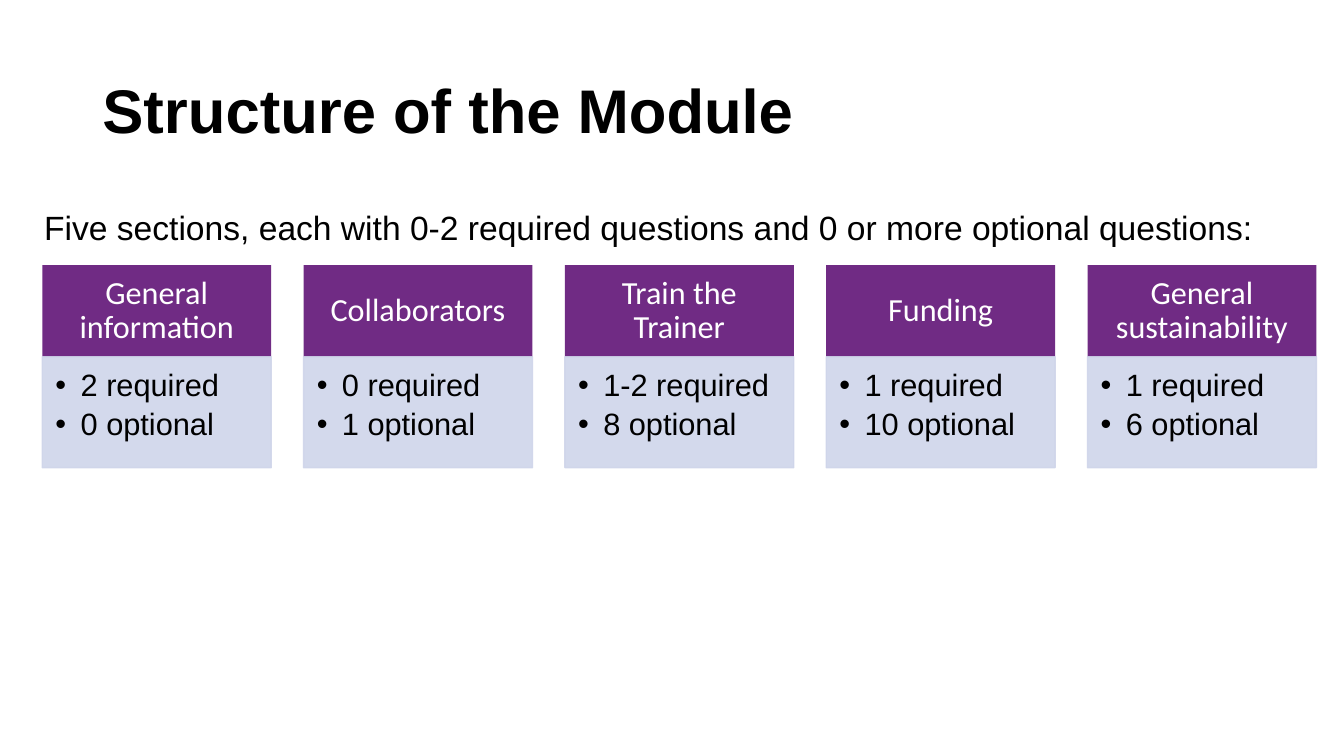
from dataclasses import dataclass

from lxml.etree import SubElement
from pptx import Presentation
from pptx.dml.color import RGBColor as RGB
from pptx.enum.shapes import MSO_SHAPE as Shape
from pptx.enum.text import MSO_ANCHOR as Anchor, PP_ALIGN as Align
from pptx.oxml.ns import qn
from pptx.util import Pt


@dataclass(frozen=True)
class Theme:
    black: RGB = RGB(0x00, 0x00, 0x00)
    white: RGB = RGB(0xFF, 0xFF, 0xFF)
    purple: RGB = RGB(0x70, 0x2B, 0x84)
    pale: RGB = RGB(0xCF, 0xD5, 0xEA)
    sans: str = "Arial"
    label: str = "Calibri"
    title: int = 44
    intro: int = 24
    head: int = 23
    item: int = 22


THEME = Theme()

SECTIONS = [
    ("General information", "2 required", "0 optional"),
    ("Collaborators", "0 required", "1 optional"),
    ("Train the Trainer", "1-2 required", "8 optional"),
    ("Funding", "1 required", "10 optional"),
    ("General sustainability", "1 required", "6 optional"),
]

LEFT, STEP, WIDTH = 30.24, 186.65, 163.5
HEAD_TOP, HEAD_HIGH = 189.4, 65.5
BODY_HIGH = 79.2


def place(shape, left, top, width, height):
    shape.left, shape.top = Pt(left), Pt(top)
    shape.width, shape.height = Pt(width), Pt(height)


def add_run(para, text, size, color, font=THEME.sans, bold=False):
    run = para.add_run()
    run.text = text
    run.font.name = font
    run.font.size = Pt(size)
    run.font.bold = bold
    run.font.color.rgb = color


def set_alpha(fill, percent):
    """Make a solid fill partly transparent."""
    for color in fill.iter(qn("a:srgbClr")):
        SubElement(color, qn("a:alpha"), val=str(percent * 1000))


def add_bullet(para, indent):
    props = para._p.get_or_add_pPr()
    props.set("marL", str(Pt(indent)))
    props.set("indent", str(-Pt(indent)))
    SubElement(props, qn("a:buFont"), typeface=THEME.sans)
    SubElement(props, qn("a:buChar"), char="•")


def add_box(slide, left, top, high, color, insets, anchor):
    box = slide.shapes.add_shape(
        Shape.RECTANGLE, Pt(left), Pt(top), Pt(WIDTH), Pt(high))
    box.shadow.inherit = False
    box.fill.solid()
    box.fill.fore_color.rgb = color
    frame = box.text_frame
    frame.word_wrap = True
    frame.vertical_anchor = anchor
    (frame.margin_left, frame.margin_top,
     frame.margin_right, frame.margin_bottom) = map(Pt, insets)
    return box


def add_head(slide, left, text):
    box = add_box(slide, left, HEAD_TOP, HEAD_HIGH, THEME.purple,
                  (13, 7.2, 13, 7.2), Anchor.MIDDLE)
    box.line.fill.background()
    para = box.text_frame.paragraphs[0]
    para.alignment = Align.CENTER
    para.line_spacing = 0.9
    add_run(para, text, THEME.head, THEME.white, THEME.label)


def add_list(slide, left, items):
    box = add_box(slide, left, HEAD_TOP + HEAD_HIGH, BODY_HIGH, THEME.pale,
                  (9.4, 9.4, 12.2, 13.7), Anchor.TOP)
    box.line.color.rgb = THEME.pale
    box.line.width = Pt(1)
    set_alpha(box._element.spPr, 90)
    frame = box.text_frame
    for index, item in enumerate(items):
        para = frame.add_paragraph() if index else frame.paragraphs[0]
        para.alignment = Align.LEFT
        para.line_spacing = 0.9
        para.space_after = Pt(4)
        add_bullet(para, 18)
        add_run(para, item, THEME.item, THEME.black)


def add_title(slide, text):
    title = slide.shapes.title
    place(title, 66, 28.8, 894, 104.4)
    title.text_frame.vertical_anchor = Anchor.MIDDLE
    para = title.text_frame.paragraphs[0]
    para.alignment = Align.LEFT
    para.line_spacing = 0.9
    add_run(para, text, THEME.title, THEME.black, bold=True)


def add_intro(slide, text):
    box = slide.shapes.add_textbox(Pt(24.5), Pt(144), Pt(911), Pt(36))
    box.text_frame.word_wrap = True
    add_run(box.text_frame.paragraphs[0], text, THEME.intro, THEME.black)


def main():
    deck = Presentation()
    deck.slide_width, deck.slide_height = Pt(960), Pt(540)
    slide = deck.slides.add_slide(deck.slide_layouts.get_by_name("Title Only"))
    add_title(slide, "Structure of the Module")
    for index, (head, *items) in enumerate(SECTIONS):
        left = LEFT + index * STEP
        add_head(slide, left, head)
        add_list(slide, left, items)
    add_intro(slide, "Five sections, each with 0-2 required questions "
                     "and 0 or more optional questions:")
    deck.save("out.pptx")


if __name__ == "__main__":
    main()
